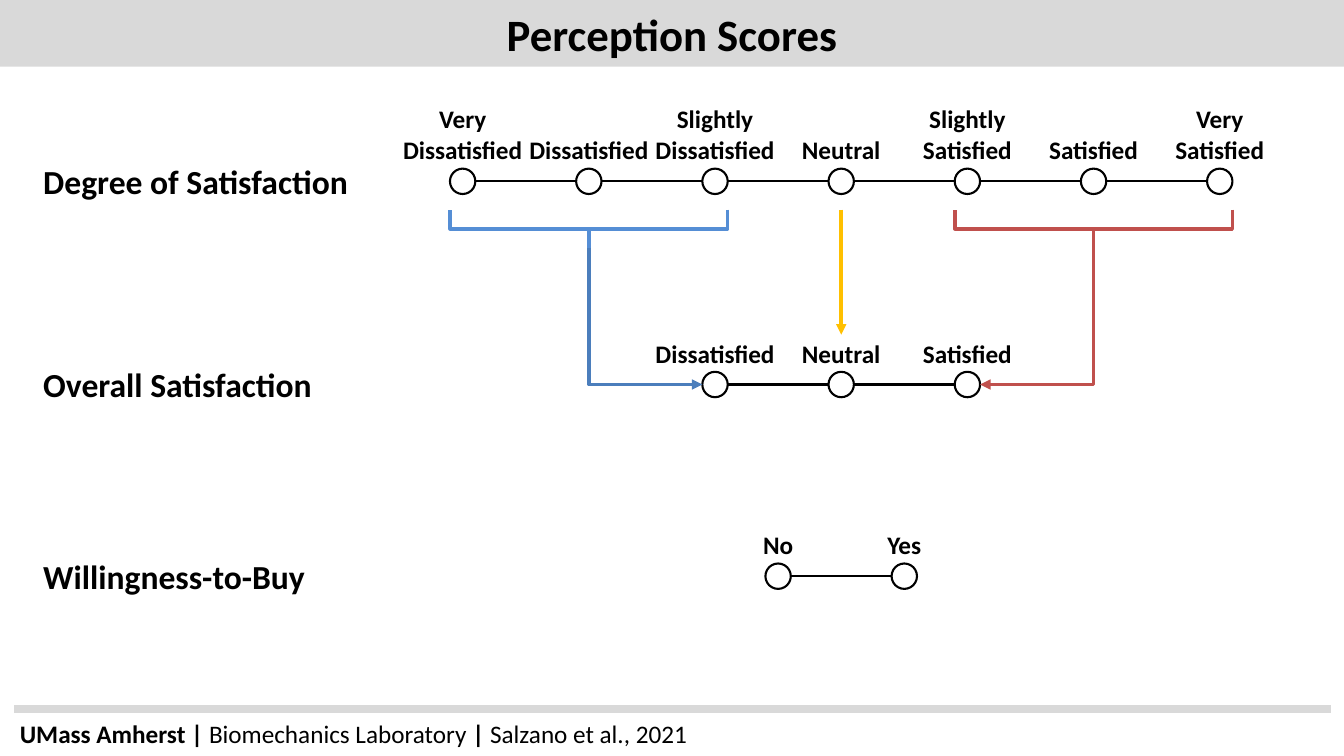
from lxml.etree import SubElement
from pptx import Presentation
from pptx.dml.color import RGBColor
from pptx.enum.shapes import MSO_CONNECTOR as Link, MSO_SHAPE as Preset
from pptx.enum.text import MSO_ANCHOR as Anchor, MSO_AUTO_SIZE as AutoSize, PP_ALIGN as Align
from pptx.oxml.ns import qn
from pptx.util import Cm, Pt

BLACK = RGBColor(0x00, 0x00, 0x00)
WHITE = RGBColor(0xFF, 0xFF, 0xFF)
GREY = RGBColor(0xD9, 0xD9, 0xD9)
BLUE = RGBColor(0x55, 0x8E, 0xD5)
DARK_BLUE = RGBColor(0x4B, 0x7E, 0xBC)
RED = RGBColor(0xC0, 0x50, 0x4D)
YELLOW = RGBColor(0xFF, 0xC0, 0x00)

# Lengths in centimetres
PAGE_WIDTH, PAGE_HEIGHT = 33.87, 19.05
MIDDLE, PITCH, RADIUS = 21.2, 3.18, 0.32
DEGREE_Y, OVERALL_Y, BUY_Y = 4.57, 9.69, 14.52
BRACE_TOP, BRACE_DEPTH, BRACE_SPAN = 5.28, 0.97, 6.99


def write(frame, *spans, size=18, align=Align.LEFT):
    """Fill the frame with one paragraph of (text, bold) spans."""
    para = frame.paragraphs[0]
    para.alignment = align
    for text, bold in spans:
        span = para.add_run()
        span.text = text
        font = span.font
        font.name, font.size, font.bold = "Calibri", Pt(size), bold
        font.color.rgb = BLACK


def point_x(step):
    return MIDDLE + step * PITCH


class ScorePage:
    """Holds the slide and draws each kind of element in its style."""

    def __init__(self, deck):
        self.page = deck.slides.add_slide(deck.slide_layouts[5])
        self.shapes = self.page.shapes

    def title(self, text):
        title = self.shapes.title
        title.left, title.top = Cm(0), Cm(0)
        title.width, title.height = Cm(PAGE_WIDTH), Cm(1.68)
        title.fill.solid()
        title.fill.fore_color.rgb = GREY
        title.text_frame.auto_size = AutoSize.NONE
        title.text_frame.vertical_anchor = Anchor.MIDDLE
        write(title.text_frame, (text, True), size=32, align=Align.CENTER)

    def text(self, left, top, width, height, *spans, **style):
        box = self.shapes.add_textbox(Cm(left), Cm(top), Cm(width), Cm(height))
        box.text_frame.word_wrap = True
        box.text_frame.auto_size = AutoSize.SHAPE_TO_FIT_TEXT
        write(box.text_frame, *spans, **style)

    def line(self, x1, y1, x2, y2, color=BLACK, weight=1.5, arrow=False, kind=Link.STRAIGHT):
        line = self.shapes.add_connector(kind, Cm(x1), Cm(y1), Cm(x2), Cm(y2))
        line.line.color.rgb = color
        line.line.width = Pt(weight)
        properties = line.element.spPr
        if arrow:
            SubElement(properties.find(qn("a:ln")), qn("a:tailEnd"), type="triangle")
        SubElement(properties, qn("a:effectLst"))
        return line

    def elbow_arrow(self, x1, y1, x2, y2, color):
        """Draw an arrow that runs down first and then sideways."""
        arrow = self.line(x1, y1, x2, y2, color, 2.5, arrow=True, kind=Link.ELBOW)
        across, down = abs(x2 - x1), y2 - y1
        arrow.left, arrow.top = Cm((x1 + x2 - down) / 2), Cm((y1 + y2 - across) / 2)
        arrow.width, arrow.height = Cm(down), Cm(across)
        properties = arrow.element.spPr
        properties.find(qn("a:prstGeom")).set("prst", "bentConnector2")
        frame = properties.find(qn("a:xfrm"))
        frame.attrib.pop("flipH", None)
        if x2 > x1:
            frame.set("flipH", "1")
        frame.set("rot", str((270 if x2 > x1 else 90) * 60000))

    def circle(self, x, y):
        circle = self.shapes.add_shape(
            Preset.OVAL, Cm(x - RADIUS), Cm(y - RADIUS), Cm(2 * RADIUS), Cm(2 * RADIUS))
        circle.shadow.inherit = False
        circle.fill.solid()
        circle.fill.fore_color.rgb = WHITE
        circle.line.color.rgb = BLACK
        circle.line.width = Pt(1.5)

    def brace(self, x, color):
        """Draw a square bracket below the scale, its tip pointing down at x."""
        brace = self.shapes.add_shape(
            Preset.LEFT_BRACE, Cm(x - BRACE_DEPTH / 2),
            Cm(BRACE_TOP + (BRACE_DEPTH - BRACE_SPAN) / 2), Cm(BRACE_DEPTH), Cm(BRACE_SPAN))
        brace.rotation = 270
        brace.adjustments[0], brace.adjustments[1] = 0, 0.5
        brace.shadow.inherit = False
        brace.fill.background()
        brace.line.color.rgb = color
        brace.line.width = Pt(2.5)

    def scale(self, heading, y, labels, label_width=5.41):
        """Draw a heading and a row of labelled circles centred on MIDDLE."""
        self.text(0.84, y - 0.64, 9.04, 1.27, (heading, True), size=24)
        for index, label in enumerate(labels):
            x = point_x(index - (len(labels) - 1) / 2)
            self.circle(x, y)
            if index:
                self.line(x - PITCH + RADIUS, y, x - RADIUS, y)
            width, height = (3.73, 1.8) if " " in label else (label_width, 1.02)
            self.text(x - width / 2, y - 0.28 - height, width, height,
                      (label, True), align=Align.CENTER)

    def merge(self, side, brace_color, arrow_color):
        """Lead three outer points on one side (-1 or 1) to one overall point."""
        x = point_x(2 * side)
        self.brace(x, brace_color)
        self.elbow_arrow(x, BRACE_TOP + BRACE_DEPTH,
                         point_x(side) + side * RADIUS, OVERALL_Y, arrow_color)


def main():
    deck = Presentation()
    deck.slide_width, deck.slide_height = Cm(PAGE_WIDTH), Cm(PAGE_HEIGHT)
    page = ScorePage(deck)

    page.text(0.25, 17.98, 22.81, 1.02, ("UMass Amherst | ", True),
              ("Biomechanics Laboratory ", False), ("| ", True),
              ("Salzano et al., 2021", False))
    page.line(0.36, 17.86, 33.55, 17.86, GREY, 6)
    page.title("Perception Scores")

    page.scale("Degree of Satisfaction", DEGREE_Y,
               ["Very Dissatisfied", "Dissatisfied", "Slightly Dissatisfied", "Neutral",
                "Slightly Satisfied", "Satisfied", "Very Satisfied"])
    page.scale("Overall Satisfaction", OVERALL_Y, ["Dissatisfied", "Neutral", "Satisfied"])
    page.scale("Willingness-to-Buy", BUY_Y, ["No", "Yes"], label_width=1.96)

    page.merge(-1, BLUE, DARK_BLUE)
    page.merge(1, RED, RED)
    page.line(MIDDLE, BRACE_TOP, MIDDLE, 8.43, YELLOW, 2.5, arrow=True)

    deck.save("out.pptx")


if __name__ == "__main__":
    main()
